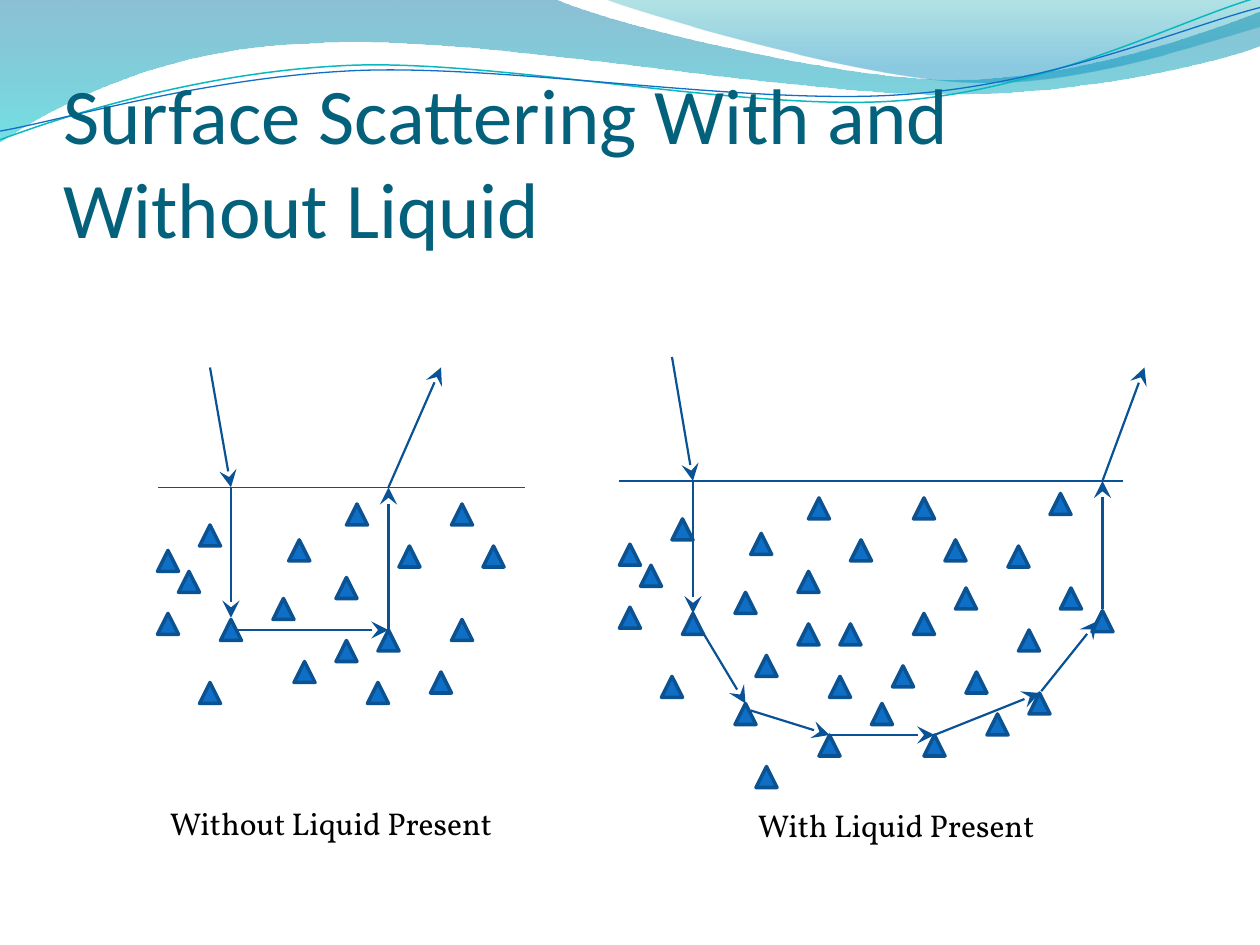
"""Build a slide comparing surface scattering with and without liquid."""
from itertools import pairwise

from lxml import etree
from pptx import Presentation
from pptx.dml.color import RGBColor
from pptx.enum.shapes import MSO_CONNECTOR, MSO_SHAPE
from pptx.enum.text import MSO_ANCHOR
from pptx.oxml.ns import qn
from pptx.util import Pt

STRAIGHT = MSO_CONNECTOR.STRAIGHT
TRIANGLE = MSO_SHAPE.ISOSCELES_TRIANGLE
BOTTOM, TOP = MSO_ANCHOR.BOTTOM, MSO_ANCHOR.TOP

COLORS = {
    "title": "04617B", "label": "000000", "ray": "095295",
    "grain": "0F6FC6", "grain_edge": "0B5292",
    "teal": "0AB8BF", "blue": "0F6FC6",
    "band_top": "0074A1", "band_end": "00C6CF",
    "crest_top": "00A1A9", "crest_end": "008BBF",
}
GRAIN_SIZE = 12

BANDS = [
    {"start": (0, 0),
     "parts": [(316.8, -0.7), (342.7, 12.2, 478.1, 45.4, 545.8, 45.4),
               (614.2, 45.4, 689.8, 18.7, 720, 6.5), (720.7, 25.9),
               (707.8, 31.7, 626.4, 54.7, 537.1, 54),
               (447.8, 54, 275, 20.2, 185, 24.5),
               (92.9, 25.9, 33.1, 59.8, -0.7, 81.4)],
     "stops": [(0, "band_top", 45), (1, "band_end", 55)]},
    {"start": (344.9, -0.7),
     "parts": [(366.5, 7.9, 491, 44.6, 553.7, 46.8),
               (616.3, 49.7, 691.9, 23, 720, 15.1), (720, 0)],
     "stops": [(0, "crest_top", 30), (0.8, "crest_end", 45)]},
]
RIPPLES = [
    {"start": (0, 79.9), "color": "teal", "width": 0.85,
     "parts": [(34.6, 67, 113.8, 41, 199.4, 37.4),
               (284.4, 33.8, 427, 64.1, 513.4, 57.6),
               (599.8, 51.1, 675.4, 10.8, 718.6, -1.4)]},
    {"start": (0, 74.9), "color": "blue", "width": 0.75,
     "parts": [(33.8, 69.1, 118.1, 44, 203.8, 40.3),
               (290.2, 36.7, 429.8, 60.5, 516.2, 54),
               (601.9, 48.2, 677.5, 15.1, 720, 4.3)]},
]
TITLE = ("Surface Scattering With and Without Liquid", (36.2, 55.5, 648, 90))
PANELS = [
    {"label": ("Without Liquid Present", (90, 455.6, 210, 29)),
     "surface": ((90, 278.5), (300, 278.5)),
     "grains": [(90, 314.5), (102, 326.5), (90, 350.5), (165, 308.5), (114, 300),
                (126, 354), (114, 390), (156, 342), (168, 378), (198, 288),
                (228, 312), (192, 330), (216, 360), (192, 366), (210, 390),
                (258, 288), (276, 312), (258, 354), (246, 384)],
     "rays": [[(120, 210), (132, 278.5), (132, 353)],
              [(135, 360), (222, 360)],
              [(222, 362), (222, 278.5), (252, 210)]]},
    {"label": ("With Liquid Present", (426, 457.1, 210, 29)),
     "surface": ((354, 274.8), (642, 274.8)),
     "grains": [(354, 311), (366, 323), (354, 347), (429, 304.8), (384, 296.5),
                (390, 350.5), (378, 386.5), (420, 338.5), (432, 374.5),
                (462, 284.5), (486, 308.5), (456, 326.5), (480, 356.5),
                (456, 356.5), (474, 386.5), (522, 284.5), (540, 308.5),
                (522, 350.5), (510, 380.5), (546, 336), (552, 384), (420, 402),
                (468, 420), (528, 420), (582, 360), (576, 312), (600, 282),
                (606, 336), (624, 349), (588, 396), (564, 408), (498, 402),
                (432, 438)],
     "rays": [[(384, 204), (396, 274.8), (396, 350.5)],
              [(402, 362), (426, 402)],
              [(429, 406), (474, 420), (534, 420), (594, 396)],
              [(595, 395), (627, 355)],
              [(630, 348), (630, 274.8), (654, 210)]]},
]


def rgb(name):
    return RGBColor.from_string(COLORS[name])


def add_outline(shapes, start, parts, close):
    builder = shapes.build_freeform(*map(Pt, start), scale=1.0)
    builder.add_line_segments([tuple(map(Pt, part[-2:])) for part in parts], close=close)
    s = builder.convert_to_shape()
    s.shadow.inherit = False
    for segment, part in zip(list(s.element.spPr.iter(qn("a:lnTo"))), parts):
        if len(part) == 6:
            bend_segment(s, segment, part)
    return s


def bend_segment(s, segment, part):
    segment.tag = qn("a:cubicBezTo")
    for child in list(segment):
        segment.remove(child)
    for x, y in zip(part[::2], part[1::2]):
        etree.SubElement(segment, qn("a:pt"), x=str(Pt(x) - s.left), y=str(Pt(y) - s.top))


def add_band(shapes, band):
    s = add_outline(shapes, band["start"], band["parts"], True)
    s.line.fill.background()
    s.fill.gradient()
    s.fill.gradient_angle = 270
    for stop, (position, color, _) in zip(s.fill.gradient_stops, band["stops"]):
        stop.position = position
        stop.color.rgb = rgb(color)
    for node, (_, _, alpha) in zip(s.element.spPr.iter(qn("a:srgbClr")), band["stops"]):
        etree.SubElement(node, qn("a:alpha"), val=str(alpha * 1000))


def add_ripple(shapes, ripple):
    s = add_outline(shapes, ripple["start"], ripple["parts"], False)
    s.fill.background()
    s.line.color.rgb = rgb(ripple["color"])
    s.line.width = Pt(ripple["width"])


def add_line(shapes, start, end, width, arrow=False):
    s = shapes.add_connector(STRAIGHT, *map(Pt, start + end))
    s.line.color.rgb = rgb("ray")
    s.line.width = Pt(width)
    if arrow:
        etree.SubElement(s.element.spPr.find(qn("a:ln")), qn("a:tailEnd"),
                         type="stealth", w="lg", len="lg")
    etree.SubElement(s.element.spPr, qn("a:effectLst"))


def add_grain(shapes, x, y):
    s = shapes.add_shape(TRIANGLE, *map(Pt, (x, y, GRAIN_SIZE, GRAIN_SIZE)))
    s.shadow.inherit = False
    s.fill.solid()
    s.fill.fore_color.rgb = rgb("grain")
    s.line.color.rgb = rgb("grain_edge")
    s.line.width = Pt(2)


def add_text(shapes, text, box, font, size, color, anchor=TOP):
    tf = shapes.add_textbox(*map(Pt, box)).text_frame
    tf.word_wrap = True
    tf.vertical_anchor = anchor
    tf.text = text
    r = tf.paragraphs[0].runs[0]
    r.font.name = font
    r.font.size = Pt(size)
    r.font.color.rgb = rgb(color)
    return tf


def main():
    prs = Presentation()
    prs.slide_width, prs.slide_height = Pt(720), Pt(540)
    shapes = prs.slides.add_slide(prs.slide_layouts[6]).shapes
    for band in BANDS:
        add_band(shapes, band)
    for ripple in RIPPLES:
        add_ripple(shapes, ripple)
    tf = add_text(shapes, *TITLE, "Calibri", 45, "title", BOTTOM)
    tf.margin_left = tf.margin_right = tf.margin_bottom = 0
    for panel in PANELS:
        add_line(shapes, *panel["surface"], 0.75)
        for x, y in panel["grains"]:
            add_grain(shapes, x, y)
        for ray in panel["rays"]:
            for start, end in pairwise(ray):
                add_line(shapes, start, end, 1.25, arrow=True)
        add_text(shapes, *panel["label"], "Vollkorn", 18, "label")
    prs.save("out.pptx")


if __name__ == "__main__":
    main()
